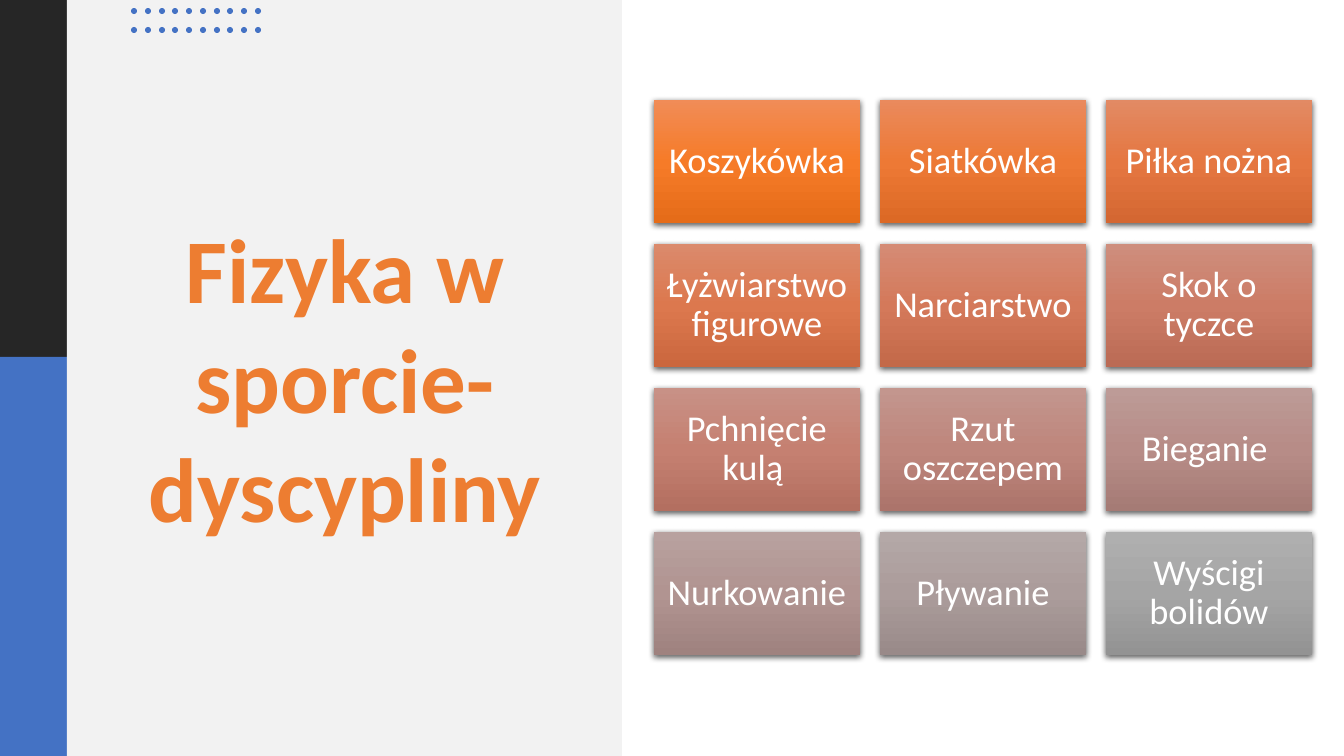
from dataclasses import dataclass

from lxml import etree
from pptx import Presentation
from pptx import util as u
from pptx.dml.color import RGBColor
from pptx.enum import shapes, text
from pptx.oxml import ns

PX = 12192000 / 1344  # EMU in one px of a 1344 x 756 slide


@dataclass(frozen=True)
class Theme:
    font: str = "Calibri"
    title_size: int = 65
    tile_size: int = 26
    dark: str = "262626"
    blue: str = "4472C4"
    panel: str = "F2F2F2"
    orange: str = "ED7D31"
    white: str = "FFFFFF"


theme = Theme()

deck = Presentation()
deck.slide_width, deck.slide_height = u.Emu(12192000), u.Emu(6858000)
page = deck.slides.add_slide(deck.slide_layouts[6])


def add_block(left, top, width, height, fill=None, kind=shapes.MSO_SHAPE.RECTANGLE):
    """Add a borderless, shadowless preset shape, measured in px."""
    block = page.shapes.add_shape(kind, *(round(n * PX) for n in (left, top, width, height)))
    block.shadow.inherit = False
    block.line.fill.background()
    if fill:
        block.fill.solid()
        block.fill.fore_color.rgb = RGBColor.from_string(fill)
    return block


def write(box, words, *, size, color, bold=False, spacing=1.0, inset=(10, 5),
          anchor=text.MSO_ANCHOR.MIDDLE):
    """Fill a shape with one centred paragraph; inset is (sides, top and bottom) in px."""
    frame = box.text_frame
    frame.word_wrap = True
    frame.vertical_anchor = anchor
    frame.margin_left = frame.margin_right = round(inset[0] * PX)
    frame.margin_top = frame.margin_bottom = round(inset[1] * PX)
    para = frame.paragraphs[0]
    para.alignment = text.PP_ALIGN.CENTER
    para.line_spacing = spacing
    span = para.add_run()
    span.text = words
    span.font.name = theme.font
    span.font.size = u.Pt(size)
    span.font.bold = bold
    span.font.color.rgb = RGBColor.from_string(color)


# Side bands and title panel
add_block(0, 0, 67, 357, theme.dark)
add_block(0, 357, 67, 399, theme.blue)
add_block(67, 0, 555, 756, theme.panel)

# Dot pattern: ten columns spread over 124 px
for row in range(2):
    for column in range(10):
        add_block(131 + round(column * 124 / 9), 8 + row * 19, 6, 6,
                  theme.blue, shapes.MSO_SHAPE.OVAL)

# Discipline tiles: label with top, middle and bottom gradient colours
disciplines = [
    ("Koszykówka", "F18C57", "F67B28", "E56C19"),
    ("Siatkówka", "EA8A5D", "ED7935", "DC6925"),
    ("Piłka nożna", "E28A64", "E57741", "D46732"),
    ("Łyżwiarstwo figurowe", "DB8A6C", "DC784E", "CB673E"),
    ("Narciarstwo", "D58B75", "D4795A", "C36949"),
    ("Skok o tyczce", "CE8E7D", "CC7C66", "BB6B55"),
    ("Pchnięcie kulą ", "C89186", "C58071", "B36F60"),
    ("Rzut oszczepem", "C3968E", "BE867C", "AC746B"),
    ("Bieganie ", "BD9B97", "B78C87", "A57B75"),
    ("Nurkowanie", "B8A19F", "B19491", "9F827F"),
    ("Pływanie", "B4A8A7", "AB9C9B", "998A89"),
    ("Wyścigi bolidów", "AFAFAF", "A5A5A5", "939393"),
]
for index, (label, *colors) in enumerate(disciplines):
    row, column = divmod(index, 3)
    tile = add_block(654 + column * 226, 100 + row * 144, 206, 123)

    tile.fill.gradient()
    gradient = tile._element.spPr.find(ns.qn("a:gradFill"))
    stops = gradient.find(ns.qn("a:gsLst"))
    for stop in list(stops):
        stops.remove(stop)
    for position, color in zip((0, 50000, 100000), colors):
        stop = etree.SubElement(stops, ns.qn("a:gs"), pos=str(position))
        etree.SubElement(stop, ns.qn("a:srgbClr"), val=color)
    direction = gradient.find(ns.qn("a:lin"))
    direction.set("ang", "5400000")
    direction.set("scaled", "0")

    effects = tile._element.spPr.find(ns.qn("a:effectLst"))
    shadow = etree.SubElement(effects, ns.qn("a:outerShdw"), blurRad=str(u.Pt(4.5)),
                              dist=str(u.Pt(1.5)), dir="5400000", algn="ctr", rotWithShape="0")
    shade = etree.SubElement(shadow, ns.qn("a:srgbClr"), val="000000")
    etree.SubElement(shade, ns.qn("a:alpha"), val="63000")

    write(tile, label, size=theme.tile_size, color=theme.white, spacing=0.9, inset=(11, 11))

# Title
title = page.shapes.add_textbox(*(round(n * PX) for n in (106, 208, 478, 341)))
write(title, "Fizyka w sporcie- dyscypliny", size=theme.title_size, color=theme.orange,
      bold=True, anchor=text.MSO_ANCHOR.TOP)

deck.save("out.pptx")
